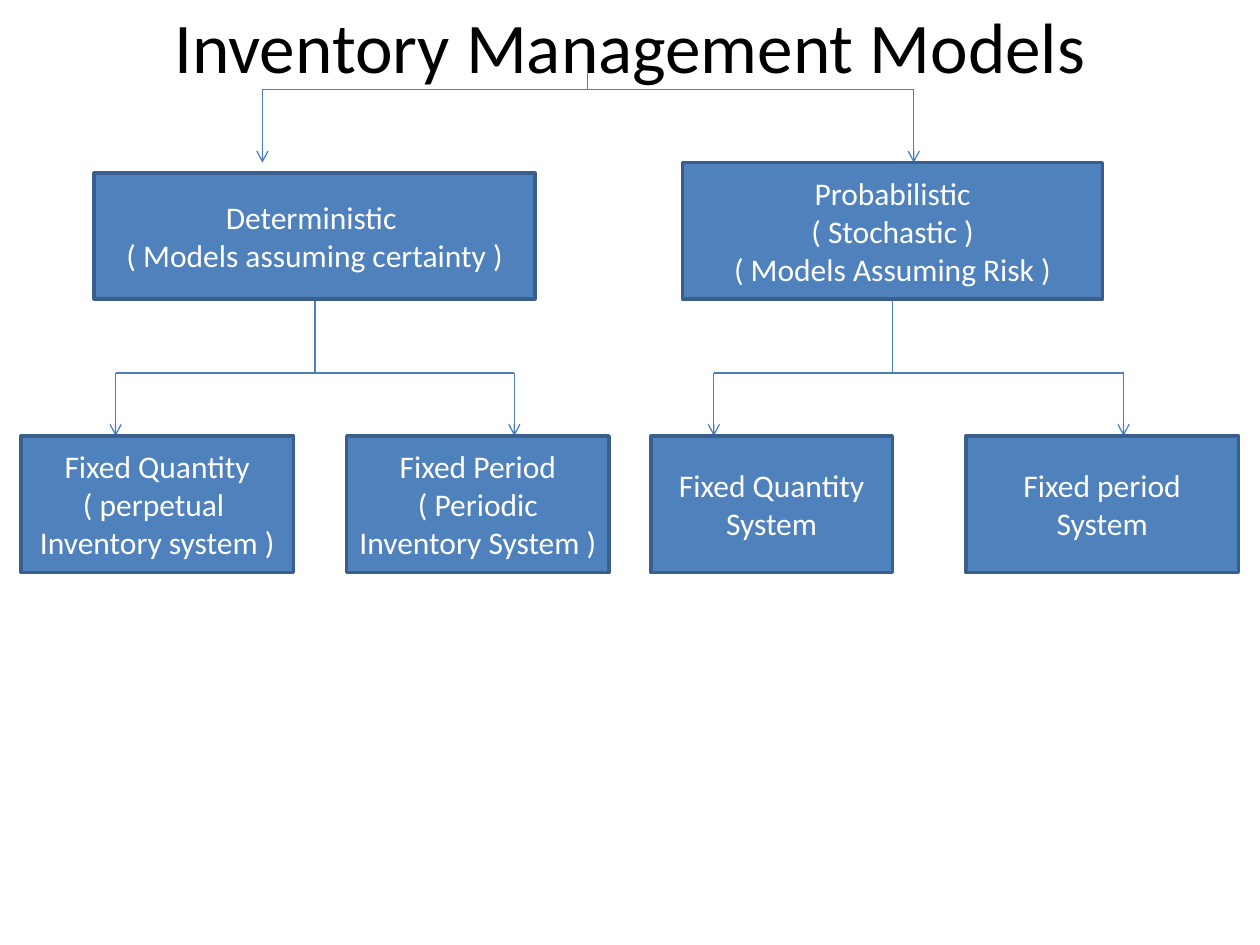
from dataclasses import dataclass

from lxml.etree import SubElement
from pptx import Presentation
from pptx.dml.color import RGBColor
from pptx.enum.shapes import MSO_CONNECTOR, MSO_SHAPE
from pptx.enum.text import MSO_ANCHOR, PP_ALIGN
from pptx.oxml.ns import qn
from pptx.util import Cm, Pt


@dataclass(frozen=True)
class Theme:
    font: str = "Calibri"
    title_size: float = 40.7
    body_size: float = 18
    title_color: str = "000000"
    box_text: str = "FFFFFF"
    box_fill: str = "4F81BD"
    box_line: str = "3A5F8C"
    connector: str = "4B7EBC"
    box_line_width: float = 2
    connector_width: float = 0.75


def write_text(tf, text, *, font, size, color):
    tf.word_wrap = True
    tf.vertical_anchor = MSO_ANCHOR.MIDDLE
    for i, line in enumerate(text.split("\n")):
        p = tf.paragraphs[0] if i == 0 else tf.add_paragraph()
        p.alignment = PP_ALIGN.CENTER
        r = p.add_run()
        r.text = line
        r.font.name = font
        r.font.size = Pt(size)
        r.font.color.rgb = RGBColor.from_string(color)


class Diagram:
    def __init__(self, slide, theme):
        self.shapes = slide.shapes
        self.theme = theme

    def title(self, text, left, top, width, height):
        sp = self.shapes.add_textbox(Cm(left), Cm(top), Cm(width), Cm(height))
        write_text(sp.text_frame, text, font=self.theme.font,
                   size=self.theme.title_size, color=self.theme.title_color)

    def box(self, text, left, top, width, height):
        sp = self.shapes.add_shape(
            MSO_SHAPE.RECTANGLE, Cm(left), Cm(top), Cm(width), Cm(height))
        sp.shadow.inherit = False
        sp.fill.solid()
        sp.fill.fore_color.rgb = RGBColor.from_string(self.theme.box_fill)
        sp.line.color.rgb = RGBColor.from_string(self.theme.box_line)
        sp.line.width = Pt(self.theme.box_line_width)
        write_text(sp.text_frame, text, font=self.theme.font,
                   size=self.theme.body_size, color=self.theme.box_text)

    def line(self, x1, y1, x2, y2, arrow=False):
        cxn = self.shapes.add_connector(
            MSO_CONNECTOR.STRAIGHT, Cm(x1), Cm(y1), Cm(x2), Cm(y2))
        cxn.line.color.rgb = RGBColor.from_string(self.theme.connector)
        cxn.line.width = Pt(self.theme.connector_width)
        if arrow:
            SubElement(cxn.line._get_or_add_ln(), qn("a:tailEnd"), type="arrow")
        SubElement(cxn._element.spPr, qn("a:effectLst"))

    def branch(self, stem_x, top, bar_y, bottom, child_xs):
        self.line(stem_x, top, stem_x, bar_y)
        for x in child_xs:
            self.line(stem_x, bar_y, x, bar_y)
            self.line(x, bar_y, x, bottom, arrow=True)


def main():
    prs = Presentation()
    prs.slide_width, prs.slide_height = Cm(25.4), Cm(19.05)
    s = prs.slides.add_slide(prs.slide_layouts[6])
    d = Diagram(s, Theme())

    d.title("Inventory Management Models", 1.9, 0, 21.6, 1.8)

    model_bottom, system_top, system_height = 6.03, 8.79, 2.75
    d.branch(11.85, 0.95, 1.8, 3.28, (5.29, 18.42))
    for stem_x, child_xs in ((6.35, (2.33, 10.37)), (17.99, (14.39, 22.65))):
        d.branch(stem_x, model_bottom, 7.52, system_top, child_xs)

    models = (
        ("Deterministic \n( Models assuming certainty )", 1.9, 3.49, 8.89),
        ("Probabilistic\n( Stochastic )\n( Models Assuming Risk )", 13.76, 3.28, 8.47),
    )
    for text, left, top, width in models:
        d.box(text, left, top, width, model_bottom - top)

    systems = (
        ("Fixed Quantity\n( perpetual \nInventory system )", 0.42, 5.5),
        ("Fixed Period\n( Periodic Inventory System )", 6.99, 5.29),
        ("Fixed Quantity System", 13.12, 4.87),
        ("Fixed period System", 19.47, 5.5),
    )
    for text, left, width in systems:
        d.box(text, left, system_top, width, system_height)

    prs.save("out.pptx")


if __name__ == "__main__":
    main()
